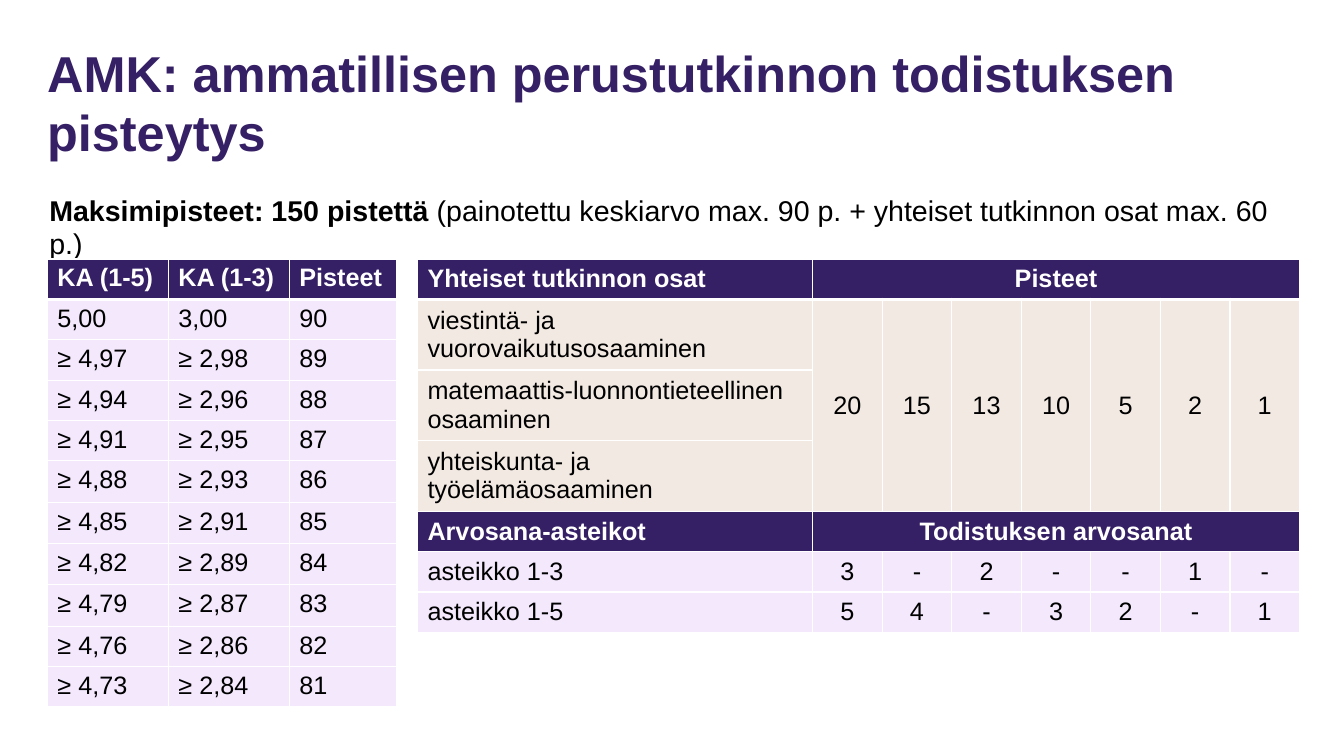
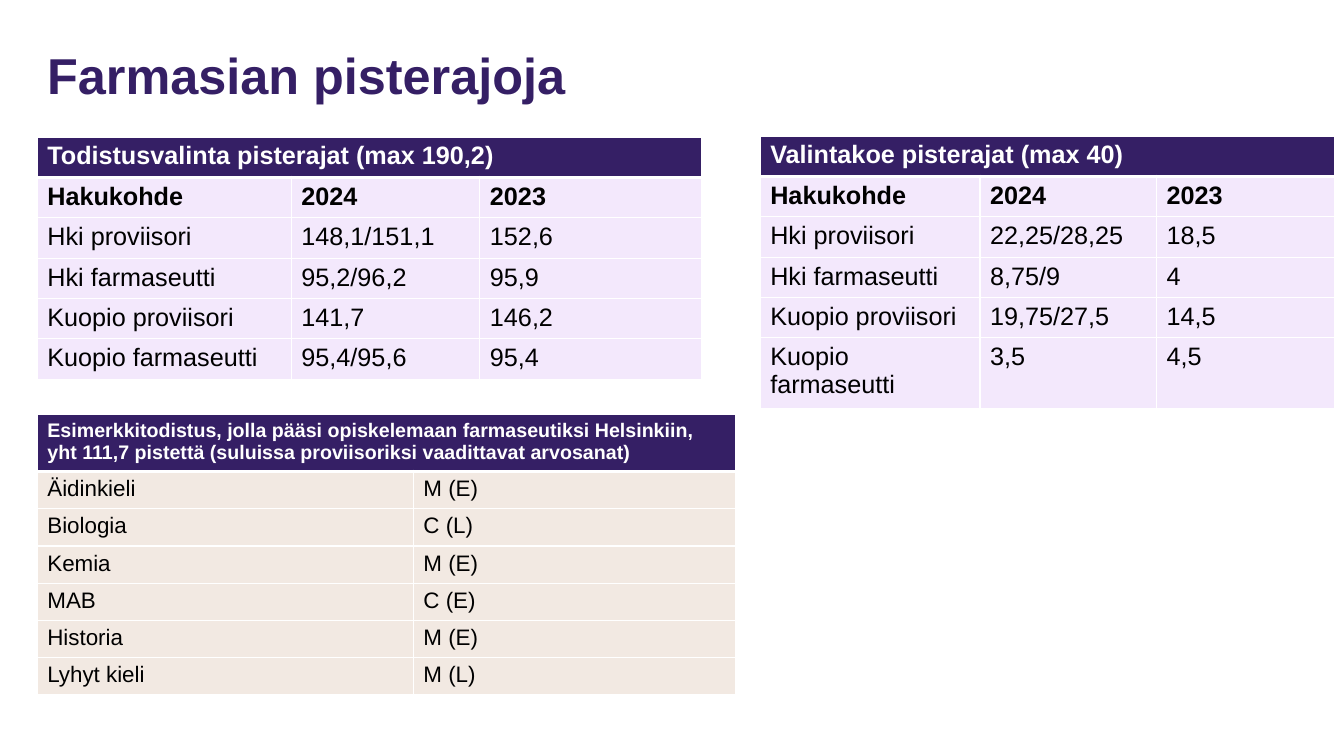
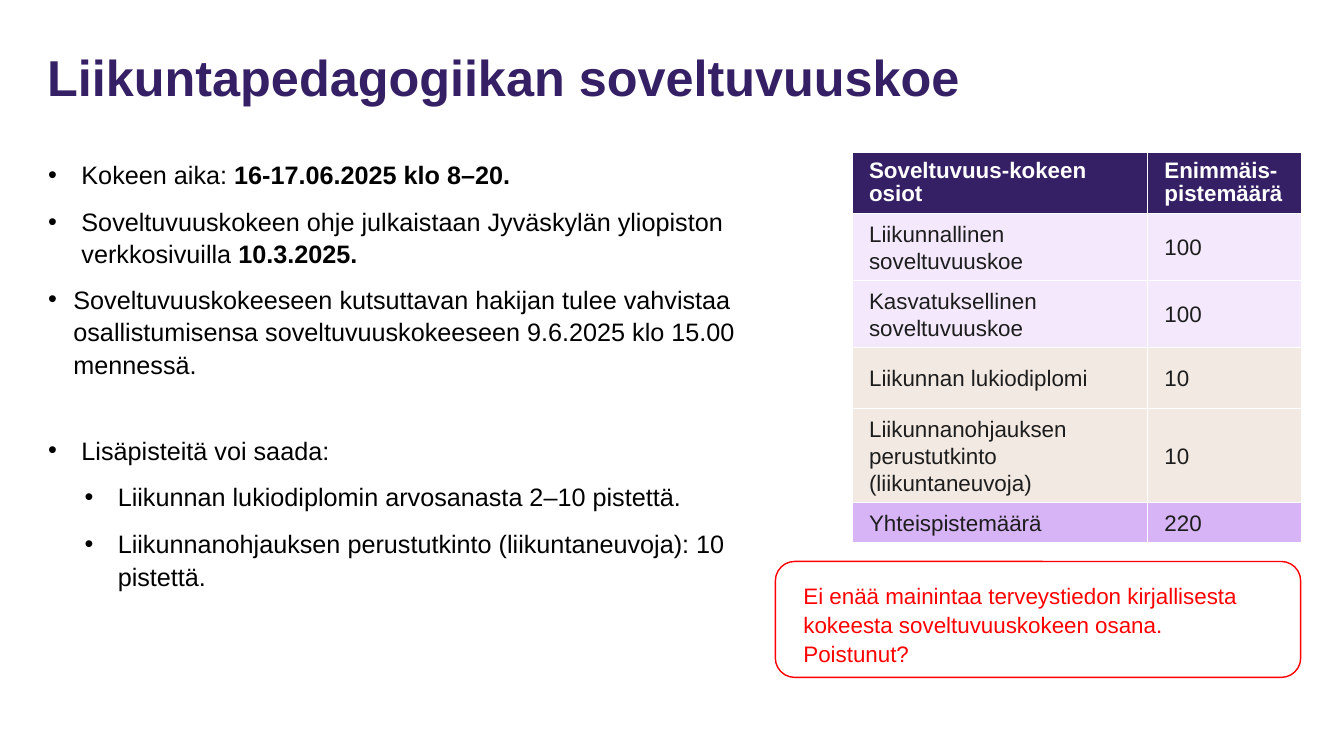
from dataclasses import dataclass
from lxml.etree import SubElement
from pptx import Presentation
from pptx.dml.color import RGBColor
from pptx.enum.shapes import MSO_SHAPE
from pptx.enum.text import MSO_ANCHOR, PP_ALIGN
from pptx.oxml.ns import qn
from pptx.util import Emu, Pt

EMU_PER_PX = 9144  # 100 px to the inch


def px(length):
    return Emu(length * EMU_PER_PX)


@dataclass(frozen=True)
class Theme:
    font: str = "Arial"
    purple: str = "351F65"
    lilac: str = "F3E8FC"
    violet: str = "D7B4F5"
    sand: str = "F2E9E2"
    white: str = "FFFFFF"
    black: str = "000000"
    ink: str = "1D1D1D"
    red: str = "FF0000"
    title_size: float = 36
    lead_size: float = 20.4
    body_size: float = 18
    small_size: float = 16
    caption_size: float = 14
    tight: float = 0.97
    loose: float = 1.08


THEME = Theme()


@dataclass(frozen=True)
class RowStyle:
    fill: str
    color: str = THEME.black
    bold: bool = False
    size: float = THEME.body_size
    leading: float = 0  # exact points, 0 for single spacing


HEADER = RowStyle(THEME.purple, THEME.white, True)
LILAC = RowStyle(THEME.lilac)
LILAC_BOLD = RowStyle(THEME.lilac, bold=True)
SAND = RowStyle(THEME.sand)


@dataclass(frozen=True)
class Bullet:
    runs: tuple
    left: int = 33
    hang: int = 33
    before: float = 4
    after: float = 6


class Deck:
    def __init__(self, theme):
        self.theme = theme
        self.prs = Presentation()
        self.prs.slide_width, self.prs.slide_height = px(1333), px(750)
        self.slide = None

    def new_slide(self, title, title_height):
        self.slide = self.prs.slides.add_slide(self.prs.slide_layouts[6])
        frame = self.frame(37, 40, 1253, title_height, MSO_ANCHOR.MIDDLE)
        heading = frame.paragraphs[0]
        heading.line_spacing = self.theme.tight
        self.run(heading, title, self.theme.title_size, self.theme.purple, True)

    def frame(self, left, top, width, height, anchor=MSO_ANCHOR.TOP):
        box = self.slide.shapes.add_textbox(px(left), px(top), px(width), px(height))
        box.text_frame.word_wrap = True
        box.text_frame.vertical_anchor = anchor
        return box.text_frame

    def run(self, paragraph, text, size, color, bold=False):
        run = paragraph.add_run()
        run.text = text
        run.font.name, run.font.size, run.font.bold = self.theme.font, Pt(size), bold
        run.font.color.rgb = RGBColor.from_string(color)

    def text(self, left, top, width, height, runs, size, color, spacing):
        paragraph = self.frame(left, top, width, height).paragraphs[0]
        paragraph.line_spacing = spacing
        for words, bold in runs:
            self.run(paragraph, words, size, color, bold)

    def bullets(self, left, top, width, height, items):
        frame = self.frame(left, top, width, height)
        for index, item in enumerate(items):
            paragraph = frame.add_paragraph() if index else frame.paragraphs[0]
            props = paragraph._p.get_or_add_pPr()
            props.set("marL", str(px(item.left)))
            props.set("indent", str(-px(item.hang)))
            SubElement(props, qn("a:buFont")).set("typeface", self.theme.font)
            SubElement(props, qn("a:buChar")).set("char", "•")
            paragraph.line_spacing = self.theme.loose
            paragraph.space_before = Pt(item.before if index else 0)
            paragraph.space_after = Pt(item.after)
            for words, bold in item.runs:
                self.run(paragraph, words, self.theme.body_size, self.theme.black, bold)

    def outline(self, left, top, width, height, color):
        shape = self.slide.shapes.add_shape(
            MSO_SHAPE.ROUNDED_RECTANGLE, px(left), px(top), px(width), px(height))
        shape.shadow.inherit = False
        shape.fill.background()
        shape.line.color.rgb = RGBColor.from_string(color)
        shape.line.width = Pt(1)

    def borders(self, cell, widths):
        props = cell._tc.get_or_add_tcPr()
        for side, width in zip("LRTB", widths):
            line = SubElement(props, qn(f"a:ln{side}"), w=str(Pt(width)))
            fill = SubElement(line, qn("a:solidFill"))
            SubElement(fill, qn("a:srgbClr"), val=self.theme.white)

    def table(self, left, top, widths, heights, rows, merges=(), middle=False,
              centred=False, border=1, header_rule=3, margins=(10, 5)):
        """Rows are (style, texts); merges are (row, column, last row, last column)."""
        table = self.slide.shapes.add_table(
            len(rows), len(widths), px(left), px(top), px(sum(widths)), px(sum(heights))).table
        table.first_row = table.horz_banding = False
        for column, width in zip(table.columns, widths):
            column.width = px(width)
        for row, height in zip(table.rows, heights):
            row.height = px(height)
        for r, (style, texts) in enumerate(rows):
            for c in range(len(widths)):
                cell = table.cell(r, c)
                self.borders(cell, (border, border, header_rule if r == 1 else border,
                                    header_rule if r == 0 else border))
                cell.fill.solid()
                cell.fill.fore_color.rgb = RGBColor.from_string(style.fill)
                cell.margin_left = cell.margin_right = px(margins[0])
                cell.margin_top = cell.margin_bottom = px(margins[1])
                cell.vertical_anchor = MSO_ANCHOR.MIDDLE if middle else MSO_ANCHOR.TOP
                if c < len(texts) and texts[c]:
                    self.cell_text(cell, texts[c], style, centred and c > 0)
        for r, c, last_row, last_column in merges:
            table.cell(r, c).merge(table.cell(last_row, last_column))

    def cell_text(self, cell, text, style, centred):
        for index, line in enumerate(text.split("\n")):
            frame = cell.text_frame
            paragraph = frame.add_paragraph() if index else frame.paragraphs[0]
            if centred:
                paragraph.alignment = PP_ALIGN.CENTER
            if style.leading:
                paragraph.line_spacing = Pt(style.leading)
            self.run(paragraph, line, style.size, style.color, style.bold)


def certificate_points(deck):
    deck.new_slide("AMK: ammatillisen perustutkinnon todistuksen pisteytys", 127)
    deck.text(39, 188, 1252, 47, [
        ("Maksimipisteet: 150 pistettä ", True),
        ("(painotettu keskiarvo max. 90 p. + yhteiset tutkinnon osat max. 60 p.)", False),
    ], THEME.lead_size, THEME.black, THEME.tight)

    # Grade averages, one point less on each row
    averages = [("4,97", "2,98"), ("4,94", "2,96"), ("4,91", "2,95"), ("4,88", "2,93"),
                ("4,85", "2,91"), ("4,82", "2,89"), ("4,79", "2,87"), ("4,76", "2,86"),
                ("4,73", "2,84")]
    rows = [(HEADER, ["KA (1-5)", "KA (1-3)", "Pisteet"]), (LILAC, ["5,00", "3,00", "90"])]
    rows += [(LILAC, [f"≥ {five}", f"≥ {three}", str(89 - step)])
             for step, (five, three) in enumerate(averages)]
    deck.table(47, 257, [120, 120, 106], [40] + [40] * 4 + [41] * 4 + [40] * 2, rows)

    # Common units and grading scales
    deck.table(414, 257, [392] + [69] * 7, [37, 66, 66, 66, 38, 38, 38], [
        (HEADER, ["Yhteiset tutkinnon osat", "Pisteet"]),
        (SAND, ["viestintä- ja vuorovaikutusosaaminen", "20", "15", "13", "10", "5", "2", "1"]),
        (SAND, ["matemaattis-luonnontieteellinen osaaminen"]),
        (SAND, ["yhteiskunta- ja työelämäosaaminen"]),
        (HEADER, ["Arvosana-asteikot", "Todistuksen arvosanat"]),
        (LILAC, ["asteikko 1-3", "3", "-", "2", "-", "-", "1", "-"]),
        (LILAC, ["asteikko 1-5", "5", "4", "-", "3", "2", "-", "1"]),
    ], merges=[(0, 1, 0, 7), (4, 1, 4, 7)] + [(1, c, 3, c) for c in range(1, 8)],
        middle=True, centred=True)


def pharmacy_limits(deck):
    deck.new_slide("Farmasian pisterajoja", 72)
    programmes = ["Hki proviisori", "Hki farmaseutti", "Kuopio proviisori", "Kuopio farmaseutti"]

    # Score limits by admission route
    routes = [
        ("Todistusvalinta pisterajat (max 190,2)", 37, 136, [252, 187, 220], [37] + [39] * 5,
         [("148,1/151,1", "152,6"), ("95,2/96,2", "95,9"), ("141,7", "146,2"),
          ("95,4/95,6", "95,4")]),
        ("Valintakoe pisterajat (max 40)", 754, 135, [218, 175, 177], [38] * 5 + [66],
         [("22,25/28,25", "18,5"), ("8,75/9", "4"), ("19,75/27,5", "14,5"), ("3,5", "4,5")]),
    ]
    for heading, left, top, widths, heights, limits in routes:
        rows = [(HEADER, [heading]), (LILAC_BOLD, ["Hakukohde", "2024", "2023"])]
        rows += [(LILAC, [name, *pair]) for name, pair in zip(programmes, limits)]
        deck.table(left, top, widths, heights, rows, merges=[(0, 0, 0, 2)])

    # Example certificate
    caption = RowStyle(THEME.purple, THEME.white, True, THEME.caption_size)
    grade = RowStyle(THEME.sand, size=THEME.small_size)
    subjects = [("Äidinkieli", "M (E)"), ("Biologia", "C (L)"), ("Kemia", "M (E)"),
                ("MAB", "C (E)"), ("Historia", "M (E)"), ("Lyhyt kieli", "M (L)")]
    deck.table(37, 411, [373, 320], [52] + [37] * 6, [
        (caption, ["Esimerkkitodistus, jolla pääsi opiskelemaan farmaseutiksi Helsinkiin, "
                   "yht 111,7 pistettä (suluissa proviisoriksi vaadittavat arvosanat)"]),
        *[(grade, subject) for subject in subjects],
    ], merges=[(0, 0, 0, 1)])


def aptitude_test(deck):
    deck.new_slide("Liikuntapedagogiikan soveltuvuuskoe", 76)

    # Dates and extra points
    deck.bullets(38, 151, 774, 465, [
        Bullet((("Kokeen aika: ", False), ("16-17.06.2025 klo 8–20.", True))),
        Bullet((("Soveltuvuuskokeen ohje julkaistaan Jyväskylän yliopiston verkkosivuilla ", False),
                ("10.3.2025.", True))),
        Bullet((("Soveltuvuuskokeeseen kutsuttavan hakijan tulee vahvistaa osallistumisensa "
                 "soveltuvuuskokeeseen 9.6.2025 klo 15.00 mennessä.", False),),
               left=25, hang=25, before=3, after=3),
        Bullet((("Lisäpisteitä voi saada:", False),), before=35),
        Bullet((("Liikunnan lukiodiplomin arvosanasta 2–10 pistettä.", False),), left=69),
        Bullet((("Liikunnanohjauksen perustutkinto (liikuntaneuvoja): 10 pistettä.", False),),
               left=69),
    ])

    # Maximum points by part
    header = RowStyle(THEME.purple, THEME.white, True, THEME.small_size, 16.5)
    test, bonus, total = [RowStyle(fill, THEME.ink, size=THEME.small_size, leading=19.5)
                          for fill in (THEME.lilac, THEME.sand, THEME.violet)]
    deck.table(845, 151, [293, 153], [61, 66, 66, 61, 85, 40], [
        (header, ["Soveltuvuus-kokeen osiot", "Enimmäis-pistemäärä"]),
        (test, ["Liikunnallinen soveltuvuuskoe", "100"]),
        (test, ["Kasvatuksellinen\nsoveltuvuuskoe", "100"]),
        (bonus, ["Liikunnan lukiodiplomi", "10"]),
        (bonus, ["Liikunnanohjauksen perustutkinto (liikuntaneuvoja)", "10"]),
        (total, ["Yhteispistemäärä", "220"]),
    ], middle=True, border=0.75, header_rule=0.75, margins=(17, 6))

    # Remark
    deck.outline(769, 557, 521, 115, THEME.red)
    deck.text(787, 570, 480, 91, [
        ("Ei enää mainintaa terveystiedon kirjallisesta kokeesta soveltuvuuskokeen osana. "
         "Poistunut?", False),
    ], THEME.small_size, THEME.red, THEME.loose)


def main():
    deck = Deck(THEME)
    certificate_points(deck)
    pharmacy_limits(deck)
    aptitude_test(deck)
    deck.prs.save("out.pptx")


if __name__ == "__main__":
    main()
